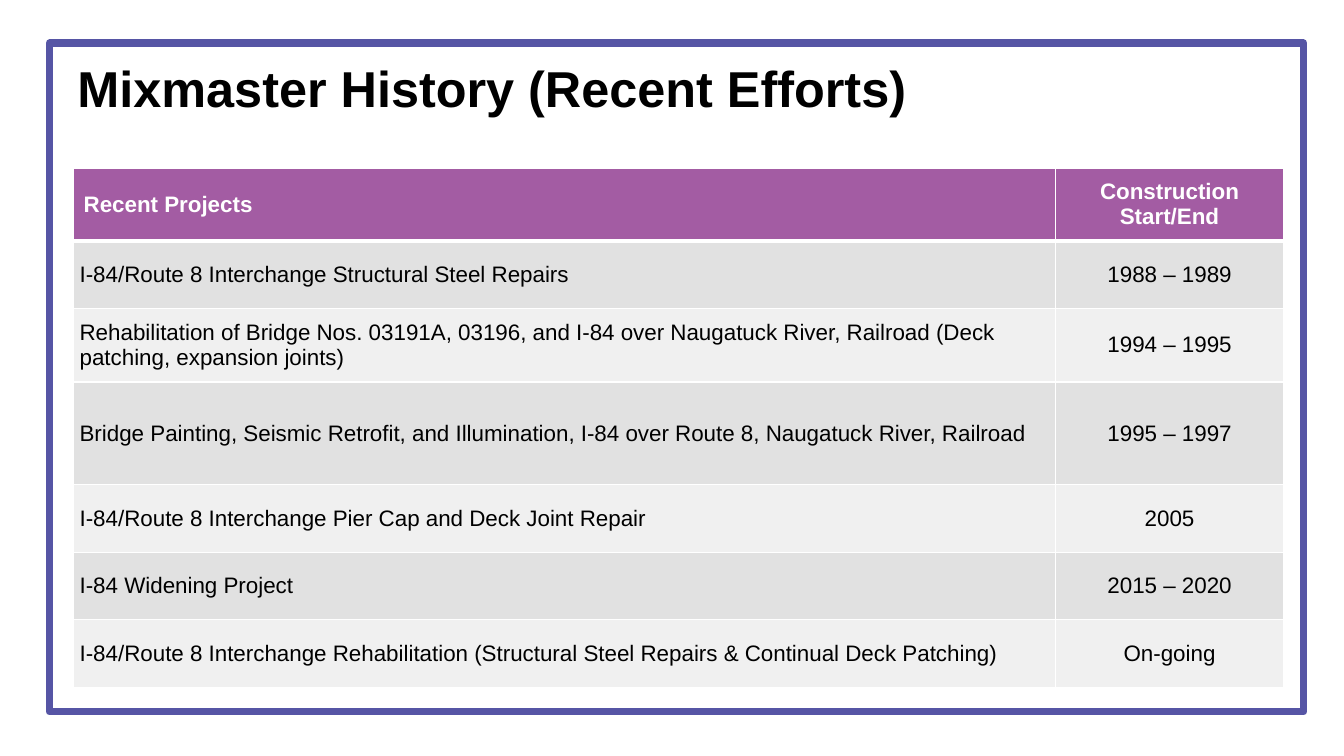
import pptx
import pptx.util
import pptx.dml.color
import pptx.enum.shapes
import pptx.enum.text
import pptx.oxml.ns
from lxml import etree

Inches = pptx.util.Inches
Pt = pptx.util.Pt
MIDDLE = pptx.enum.text.MSO_ANCHOR.MIDDLE
CENTER = pptx.enum.text.PP_ALIGN.CENTER


def color(hex_string):
    return pptx.dml.color.RGBColor.from_string(hex_string)


def add_border(cell, side, points):
    qn = pptx.oxml.ns.qn
    properties = cell._tc.get_or_add_tcPr()
    line = etree.SubElement(properties, qn("a:ln" + side), w=str(Pt(points)))
    fill = etree.SubElement(line, qn("a:solidFill"))
    etree.SubElement(fill, qn("a:srgbClr"), val="FFFFFF")


presentation = pptx.Presentation()
presentation.slide_width = Inches(13.33)
presentation.slide_height = Inches(7.5)
slide = presentation.slides.add_slide(presentation.slide_layouts[6])

# Frame around the slide
frame = slide.shapes.add_shape(
    pptx.enum.shapes.MSO_SHAPE.RECTANGLE,
    Inches(0.49), Inches(0.43), Inches(12.44), Inches(6.63))
frame.shadow.inherit = False
frame.fill.background()
frame.line.color.rgb = color("5655A5")
frame.line.width = Pt(5.5)

# Title
title = slide.shapes.add_textbox(Inches(0.67), Inches(0.58), Inches(12), Inches(0.65))
title.text_frame.word_wrap = True
title.text_frame.vertical_anchor = MIDDLE
heading = title.text_frame.paragraphs[0]
heading.text = "Mixmaster History (Recent Efforts)"
heading.line_spacing = 0.9
heading.font.name = "Arial"
heading.font.size = Pt(36)
heading.font.bold = True
heading.font.color.rgb = color("000000")

# Table of projects: name, construction dates, row height
projects = [
    ("Recent Projects", "Construction\nStart/End", 0.72),
    ("I-84/Route 8 Interchange Structural Steel Repairs", "1988 – 1989", 0.67),
    ("Rehabilitation of Bridge Nos. 03191A, 03196, and I-84 over Naugatuck River, "
     "Railroad (Deck patching, expansion joints)", "1994 – 1995", 0.73),
    ("Bridge Painting, Seismic Retrofit, and Illumination, I-84 over Route 8, "
     "Naugatuck River, Railroad", "1995 – 1997", 1.02),
    ("I-84/Route 8 Interchange Pier Cap and Deck Joint Repair", "2005", 0.67),
    ("I-84 Widening Project", "2015 – 2020", 0.67),
    ("I-84/Route 8 Interchange Rehabilitation (Structural Steel Repairs & "
     "Continual Deck Patching)", "On-going", 0.67),
]
table = slide.shapes.add_table(
    len(projects), 2, Inches(0.73), Inches(1.67), Inches(12), Inches(5.14)).table
table.columns[0].width = Inches(9.74)
table.columns[1].width = Inches(2.26)

for row, (project, dates, height) in enumerate(projects):
    table.rows[row].height = Inches(height)
    is_header = row == 0
    if is_header:
        row_fill = "A35CA3"
    else:
        row_fill = "E1E1E1" if row % 2 else "F0F0F0"
    for column, text in enumerate((project, dates)):
        cell = table.cell(row, column)
        for side in "LRTB":
            heavy = (is_header and side == "B") or (row == 1 and side == "T")
            add_border(cell, side, 3 if heavy else 1)
        cell.fill.solid()
        cell.fill.fore_color.rgb = color(row_fill)
        cell.vertical_anchor = MIDDLE
        if not is_header:
            cell.margin_left = cell.margin_right = Inches(0.06)
            cell.margin_top = cell.margin_bottom = Inches(0.06)
        cell.text_frame.text = text
        for paragraph in cell.text_frame.paragraphs:
            if column == 1:
                paragraph.alignment = CENTER
            paragraph.font.name = "Arial"
            paragraph.font.size = Pt(16)
            paragraph.font.bold = is_header
            paragraph.font.color.rgb = color("FFFFFF" if is_header else "000000")

presentation.save("out.pptx")
